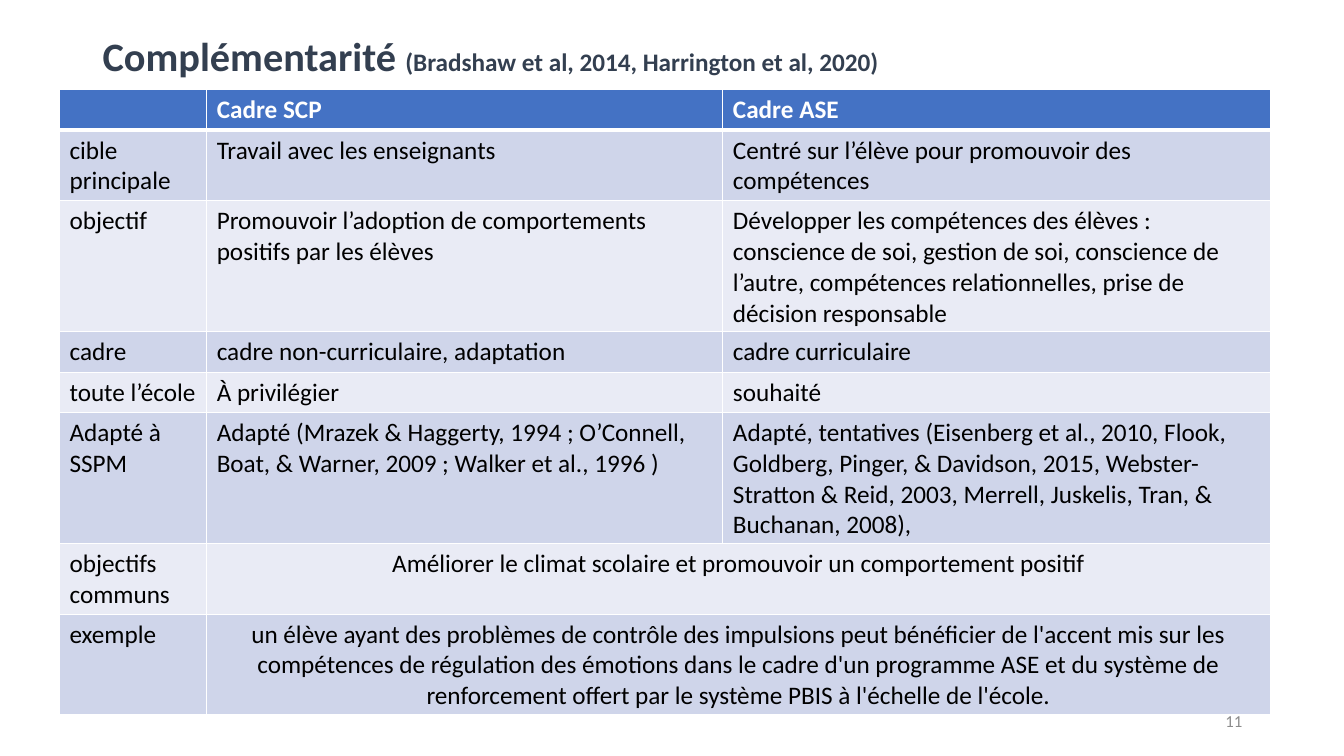
"""Build the slide comparing the SCP and ASE frameworks."""
from lxml.etree import SubElement
from pptx import Presentation
from pptx.dml.color import RGBColor
from pptx.enum.text import MSO_ANCHOR, PP_ALIGN
from pptx.oxml.ns import qn
from pptx.util import Inches, Pt

TITLE = [("Complémentarité ", 28.8), ("(Bradshaw et al, 2014, Harrington et al, 2020)", 18)]
PAGE_NUMBER = "11"
ROWS = [
    (1, ["", "Cadre SCP", "Cadre ASE"]),
    (2, ["cible principale", "Travail avec les enseignants",
         "Centré sur l’élève pour promouvoir des compétences"]),
    (4, ["objectif", "Promouvoir l’adoption de comportements positifs par les élèves",
         "Développer les compétences des élèves : conscience de soi, gestion de soi, "
         "conscience de l’autre, compétences relationnelles, prise de décision responsable"]),
    (1, ["cadre", "cadre non-curriculaire, adaptation", "cadre curriculaire"]),
    (1, ["toute l’école", "À privilégier", "souhaité"]),
    (4, ["Adapté à SSPM",
         "Adapté (Mrazek & Haggerty, 1994 ; O’Connell, Boat, & Warner, 2009 ; "
         "Walker et al., 1996 )",
         "Adapté, tentatives (Eisenberg et al., 2010, Flook, Goldberg, Pinger, & Davidson, "
         "2015, Webster-Stratton & Reid, 2003, Merrell, Juskelis, Tran, & Buchanan, 2008),"]),
    (2, ["objectifs communs",
         "Améliorer le climat scolaire et promouvoir un comportement positif"]),
    (3, ["exemple",
         "un élève ayant des problèmes de contrôle des impulsions peut bénéficier de l'accent "
         "mis sur les compétences de régulation des émotions dans le cadre d'un programme ASE "
         "et du système de renforcement offert par le système PBIS à l'échelle de l'école."]),
]
COLUMN_WIDTHS = [1.46, 5.12, 5.43]
LINE_HEIGHT, CELL_PADDING = 0.3, 0.1
COLORS = {"title": "333F50", "header": "4472C4", "odd": "CFD5EA", "even": "E9EBF5",
          "border": "FFFFFF", "header_text": "FFFFFF", "text": "000000", "number": "8C8C8C"}


def style(font, size, color, bold=False):
    font.name, font.size, font.bold = "Calibri", Pt(size), bold
    font.color.rgb = RGBColor.from_string(COLORS[color])


def add_box(page, left, top, width, height):
    frame = page.shapes.add_textbox(*map(Inches, (left, top, width, height))).text_frame
    frame.word_wrap = True
    frame.vertical_anchor = MSO_ANCHOR.MIDDLE
    return frame


def add_borders(cell, row):
    properties = cell._tc.get_or_add_tcPr()
    widths = {"lnL": 1, "lnR": 1, "lnT": 3 if row == 1 else 1, "lnB": 3 if row == 0 else 1}
    for side, width in widths.items():
        line = SubElement(properties, qn(f"a:{side}"), w=str(Pt(width)))
        fill = SubElement(line, qn("a:solidFill"))
        SubElement(fill, qn("a:srgbClr"), val=COLORS["border"])


def add_comparison(page):
    heights = [CELL_PADDING + LINE_HEIGHT * lines for lines, _ in ROWS]
    table = page.shapes.add_table(
        len(ROWS), len(COLUMN_WIDTHS), Inches(0.59), Inches(0.89),
        Inches(sum(COLUMN_WIDTHS)), Inches(sum(heights))).table
    table.first_row = table.horz_banding = False
    for column, width in zip(table.columns, COLUMN_WIDTHS):
        column.width = Inches(width)
    for row, (_, texts) in enumerate(ROWS):
        table.rows[row].height = Inches(heights[row])
        band = "header" if row == 0 else "odd" if row % 2 else "even"
        for cell in table.rows[row].cells:
            add_borders(cell, row)
            cell.fill.solid()
            cell.fill.fore_color.rgb = RGBColor.from_string(COLORS[band])
        for column, text in enumerate(texts):
            cell = table.cell(row, column)
            cell.text_frame.text = text
            style(cell.text_frame.paragraphs[0].font, 18,
                  "text" if row else "header_text", row == 0)
        if len(texts) < len(COLUMN_WIDTHS):
            shared = table.cell(row, 1)
            shared.merge(table.cell(row, 2))
            shared.text_frame.paragraphs[0].alignment = PP_ALIGN.CENTER


def main():
    deck = Presentation()
    deck.slide_width, deck.slide_height = Inches(13.33), Inches(7.5)
    page = deck.slides.add_slide(deck.slide_layouts[6])

    title = add_box(page, 0.92, 0.4, 7.94, 0.35)
    title.margin_right = 0
    para = title.paragraphs[0]
    para.line_spacing = 0.9
    for text, size in TITLE:
        span = para.add_run()
        span.text = text
        style(span.font, size, "title", True)

    add_comparison(page)

    number = add_box(page, 9.42, 6.95, 3, 0.4)
    number.text = PAGE_NUMBER
    number.paragraphs[0].alignment = PP_ALIGN.RIGHT
    style(number.paragraphs[0].font, 12, "number")
    deck.save("out.pptx")


if __name__ == "__main__":
    main()
